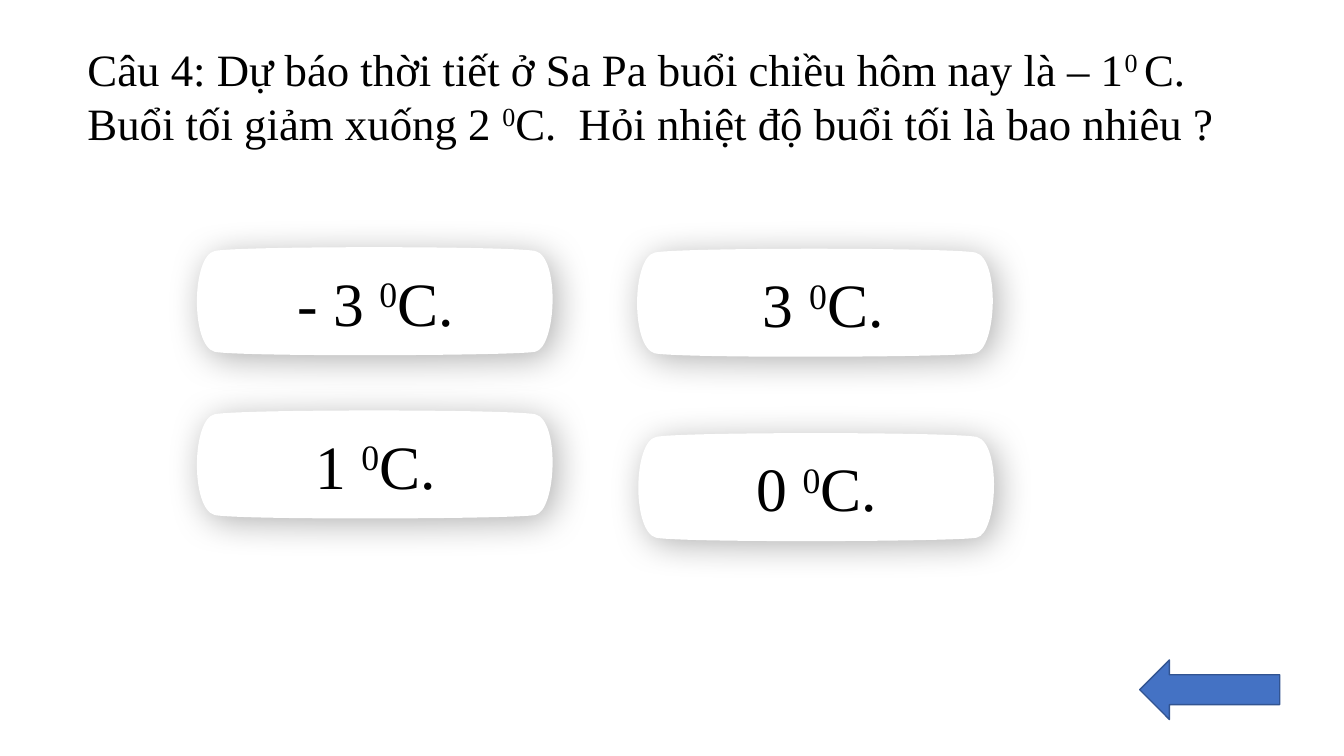
from lxml import etree
from pptx import Presentation
from pptx.dml.color import RGBColor
from pptx.enum import shapes, text
from pptx.oxml.ns import qn
from pptx.util import Pt

BLACK = RGBColor(0x00, 0x00, 0x00)
WHITE = RGBColor(0xFF, 0xFF, 0xFF)
BLUE = RGBColor(0x44, 0x72, 0xC4)
DARK_BLUE = RGBColor(0x32, 0x54, 0x91)

# Tile outline in points from the tile's top left: a start, then
# two control points and an end for each of four cubic curves
TILE_START = (246.2, 3.6)
TILE_CURVES = [
    (264.2, 7.9), (261.4, 72.7), (246.2, 75.6),
    (231.1, 78.5), (34.6, 79.2), (17.3, 75.6),
    (0, 71.3), (0.7, 7.2), (17.3, 3.6),
    (33.8, 0), (228.2, 0), TILE_START,
]


def write_degrees(frame, pieces, size):
    """Fill the first paragraph; every second piece is a superscript."""
    paragraph = frame.paragraphs[0]
    paragraph.font.name = "Times New Roman"
    paragraph.font.size = Pt(size)
    paragraph.font.color.rgb = BLACK
    for i, piece in enumerate(pieces):
        run = paragraph.add_run()
        run.text = piece
        if i % 2:
            run._r.get_or_add_rPr().set("baseline", "30000")
    return paragraph


def add_soft_shadow(shape):
    effects = etree.SubElement(shape._element.spPr, qn("a:effectLst"))
    shadow = etree.SubElement(
        effects, qn("a:outerShdw"), blurRad=str(Pt(25)), dist=str(Pt(5)),
        dir=str(45 * 60000), algn="tl", rotWithShape="0")
    color = etree.SubElement(shadow, qn("a:srgbClr"), val=str(BLACK))
    etree.SubElement(color, qn("a:alpha"), val="30000")


prs = Presentation()
prs.slide_width, prs.slide_height = Pt(960), Pt(540)
slide = prs.slides.add_slide(prs.slide_layouts[6])

question = slide.shapes.add_textbox(Pt(55.4), Pt(26.1), Pt(858.2), Pt(85)).text_frame
question.word_wrap = True
question.auto_size = text.MSO_AUTO_SIZE.SHAPE_TO_FIT_TEXT
write_degrees(question, [
    "Câu 4: Dự báo thời tiết ở Sa Pa buổi chiều hôm nay là – 1", "0 ",
    "C. Buổi tối giảm xuống 2 ", "0",
    "C.  Hỏi nhiệt độ buổi tối là bao nhiêu ?"], 32)

answers = [
    ("- 3 ", 136.1, 175.7),
    ("0 ", 451.4, 308.5),
    (" 3 ", 450.5, 176.8),
    ("1 ", 136.1, 292.3),
]
for degrees, left, top in answers:
    start, *curve_points = [
        (Pt(left + x), Pt(top + y)) for x, y in [TILE_START, *TILE_CURVES]]
    builder = slide.shapes.build_freeform(*start)
    builder.add_line_segments(curve_points, close=True)
    tile = builder.convert_to_shape()

    # Turn every three line segments into one cubic curve
    segments = list(tile._element.iter(qn("a:lnTo")))
    for first in range(0, len(segments), 3):
        curve = etree.Element(qn("a:cubicBezTo"))
        segments[first].addprevious(curve)
        for segment in segments[first:first + 3]:
            curve.append(segment[0])
            segment.getparent().remove(segment)

    tile.fill.solid()
    tile.fill.fore_color.rgb = WHITE
    tile.line.fill.background()
    add_soft_shadow(tile)
    tile.text_frame.word_wrap = True
    tile.text_frame.vertical_anchor = text.MSO_ANCHOR.MIDDLE
    answer = write_degrees(tile.text_frame, [degrees, "0", "C."], 44)
    answer.alignment = text.PP_ALIGN.CENTER

back_arrow = slide.shapes.add_shape(
    shapes.MSO_SHAPE.LEFT_ARROW, Pt(814.1), Pt(471.4), Pt(100), Pt(42.5))
back_arrow.shadow.inherit = False
back_arrow.fill.solid()
back_arrow.fill.fore_color.rgb = BLUE
back_arrow.line.color.rgb = DARK_BLUE
back_arrow.line.width = Pt(1)

prs.save("out.pptx")
